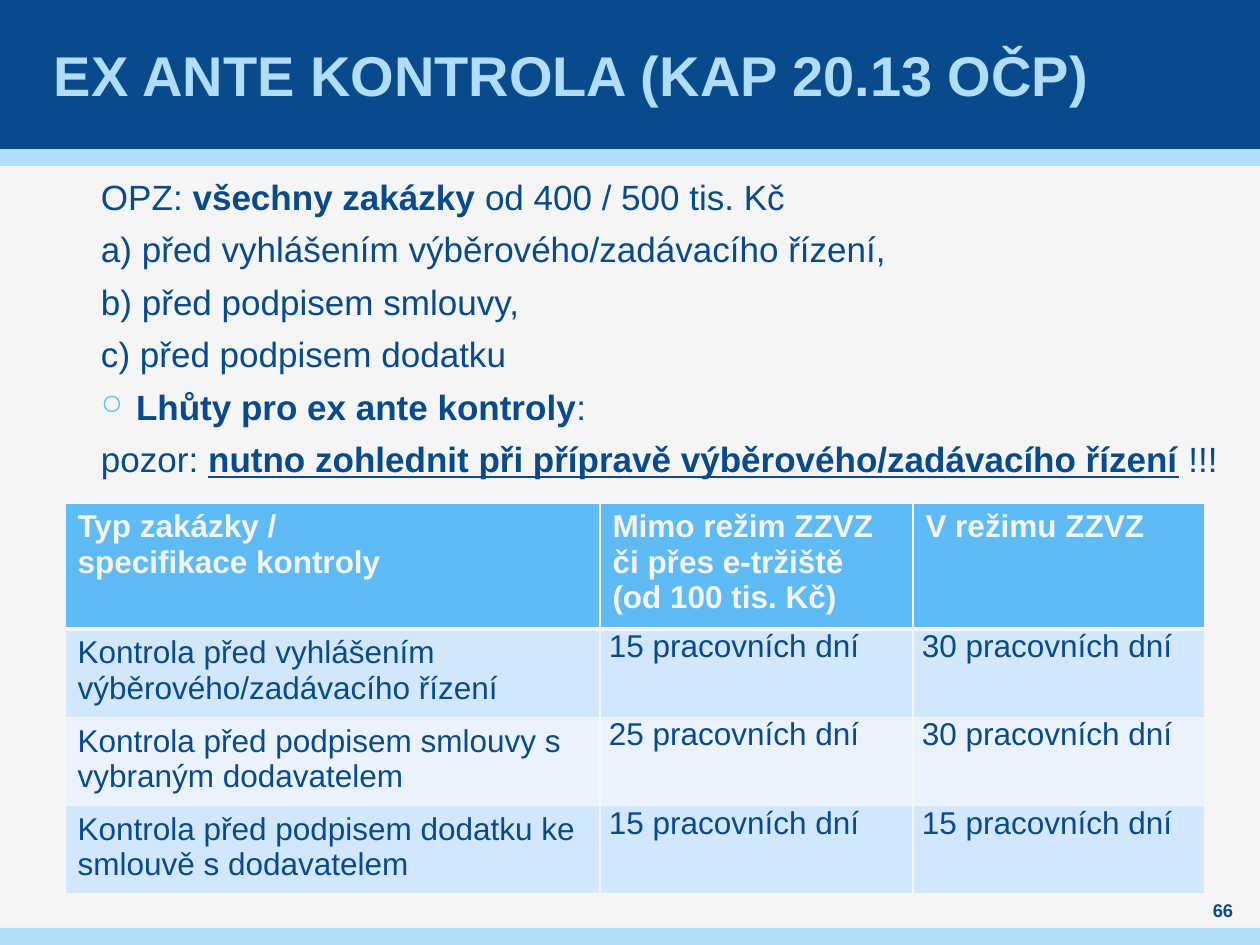
from lxml import etree
from pptx import Presentation
from pptx.dml.color import RGBColor
from pptx.enum.shapes import MSO_SHAPE
from pptx.enum.text import MSO_ANCHOR, PP_ALIGN
from pptx.oxml.ns import qn
from pptx.util import Pt

RECT = MSO_SHAPE.RECTANGLE
TOP, MIDDLE = MSO_ANCHOR.TOP, MSO_ANCHOR.MIDDLE
LEFT, CENTER = PP_ALIGN.LEFT, PP_ALIGN.CENTER
PX = 914400 / 126
NAVY, SKY, PALE, PAPER = "084A8B", "5FBBF5", "AFDDFA", "F5F5F5"
BANDS = ["D2E7FB", "EAF3FD"]

BODY = [
    [("OPZ: ", {}), ("všechny zakázky ", {"bold": True}), ("od 400 / 500 tis. Kč", {})],
    [("a) před vyhlášením výběrového/zadávacího řízení,", {})],
    [("b) před podpisem smlouvy,", {})],
    [("c) před podpisem dodatku", {})],
    [("Lhůty pro ex ante kontroly", {"bold": True}), (":", {})],
    [("pozor: ", {}),
     ("nutno zohlednit při přípravě výběrového/zadávacího řízení",
      {"bold": True, "underline": True}),
     (" !!!", {})],
]
BULLETED = 4

ROWS = [
    ["Typ zakázky /\nspecifikace kontroly",
     "Mimo režim ZZVZ či přes e-tržiště (od 100 tis. Kč)", "V režimu ZZVZ"],
    ["Kontrola před vyhlášením výběrového/zadávacího řízení",
     "15 pracovních dní", "30 pracovních dní"],
    ["Kontrola před podpisem smlouvy s vybraným dodavatelem",
     "25 pracovních dní", "30 pracovních dní"],
    ["Kontrola před podpisem dodatku ke smlouvě s dodavatelem",
     "15 pracovních dní", "15 pracovních dní"],
]


def px(n):
    return round(n * PX)


def rgb(color):
    return RGBColor.from_string(color)


def add_run(p, text, size=20, color=NAVY, bold=False, underline=False):
    r = p.add_run()
    r.text = text
    r.font.name = "Arial"
    r.font.size = Pt(size)
    r.font.color.rgb = rgb(color)
    r.font.bold = bold
    r.font.underline = underline


class Deck:
    def __init__(self, width, height):
        self.prs = Presentation()
        self.prs.slide_width, self.prs.slide_height = px(width), px(height)

    def slide(self, background):
        self.s = self.prs.slides.add_slide(self.prs.slide_layouts[6])
        fill = self.s.background.fill
        fill.solid()
        fill.fore_color.rgb = rgb(background)

    def bar(self, top, height, color):
        sp = self.s.shapes.add_shape(RECT, 0, px(top), self.prs.slide_width, px(height))
        sp.shadow.inherit = False
        sp.fill.solid()
        sp.fill.fore_color.rgb = rgb(color)
        sp.line.fill.background()

    def text(self, box, paragraphs, anchor=TOP, align=LEFT, inset=0):
        tf = self.s.shapes.add_textbox(*map(px, box)).text_frame
        tf.word_wrap = True
        tf.vertical_anchor = anchor
        tf.margin_left = tf.margin_right = px(inset)
        tf.margin_top = tf.margin_bottom = 0
        for i, runs in enumerate(paragraphs):
            p = tf.add_paragraph() if i else tf.paragraphs[0]
            p.alignment = align
            for text, fmt in runs:
                add_run(p, text, **fmt)
        return tf

    def body(self, box, paragraphs, bulleted):
        tf = self.text(box, paragraphs)
        for i, p in enumerate(tf.paragraphs):
            p.line_spacing = Pt(24)
            p.space_before = p.space_after = Pt(3)
            pPr = p._p.get_or_add_pPr()
            pPr.set("marL", str(px(92 if i == bulleted else 57)))
            pPr.set("indent", str(px(-35 if i == bulleted else 0)))
            if i == bulleted:
                clr = etree.SubElement(pPr, qn("a:buClr"))
                etree.SubElement(clr, qn("a:srgbClr"), val=SKY)
                etree.SubElement(pPr, qn("a:buSzPct"), val="80000")
                etree.SubElement(pPr, qn("a:buChar"), char="○")

    def borders(self, cell, top, bottom):
        tcPr = cell._tc.get_or_add_tcPr()
        for i, (side, width) in enumerate(zip("LRTB", (1, 1, top, bottom))):
            ln = etree.Element(qn(f"a:ln{side}"), w=str(Pt(width)))
            fill = etree.SubElement(ln, qn("a:solidFill"))
            etree.SubElement(fill, qn("a:srgbClr"), val=PAPER)
            tcPr.insert(i, ln)

    def table(self, left, top, widths, heights, rows):
        tbl = self.s.shapes.add_table(len(rows), len(widths), px(left), px(top),
                                      px(sum(widths)), px(sum(heights))).table
        for column, width in zip(tbl.columns, widths):
            column.width = px(width)
        for i, (row, height) in enumerate(zip(rows, heights)):
            tbl.rows[i].height = px(height)
            for j, text in enumerate(row):
                self.cell(tbl.cell(i, j), text, i, is_term=i > 0 and j > 0)

    def cell(self, cell, text, row, is_term):
        header = row == 0
        cell.fill.solid()
        cell.fill.fore_color.rgb = rgb(SKY if header else BANDS[(row - 1) % 2])
        self.borders(cell, 3 if row == 1 else 1, 3 if header else 1)
        if is_term:
            cell.margin_left = cell.margin_right = px(9)
            cell.margin_top = cell.margin_bottom = 0
        for i, line in enumerate(text.split("\n")):
            tf = cell.text_frame
            p = tf.add_paragraph() if i else tf.paragraphs[0]
            if is_term:
                p.space_before = p.space_after = Pt(3)
            add_run(p, line, size=18, color=PAPER if header else NAVY, bold=header)


def main():
    deck = Deck(1260, 945)
    deck.slide(PAPER)
    deck.bar(149, 17, PALE)
    deck.bar(0, 149, NAVY)
    deck.bar(928, 17, PALE)
    title = {"size": 32, "color": PALE, "bold": True}
    deck.text((49, 0, 1160, 149), [[("EX ANTE KONTROLA (KAP 20.13 OČP)", title)]],
              anchor=MIDDLE, inset=5)
    deck.body((44, 175, 1181, 297), BODY, BULLETED)
    deck.text((1191, 898, 64, 25), [[("66", {"size": 10.5, "bold": True})]],
              anchor=MIDDLE, align=CENTER)
    deck.table(65, 503, [535, 313, 292], [117, 83, 83, 83], ROWS)
    deck.prs.save("out.pptx")


if __name__ == "__main__":
    main()
